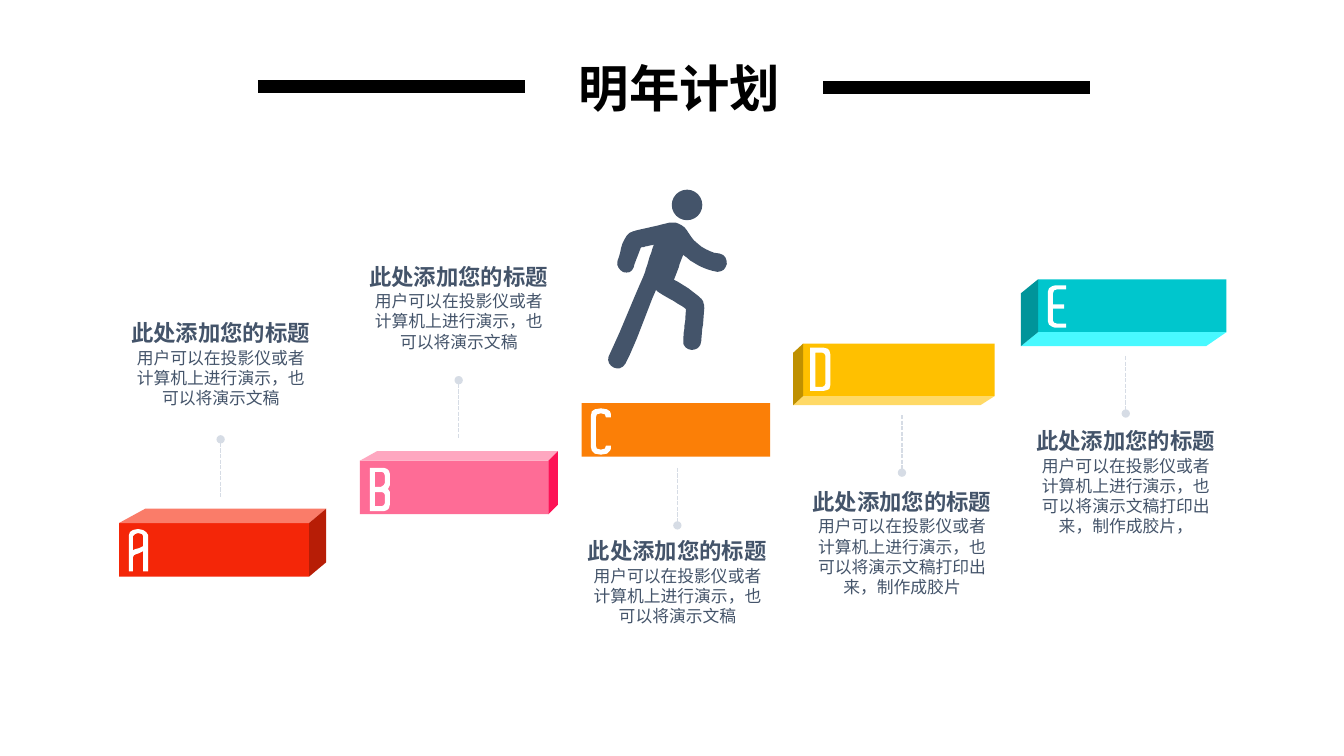
"""Builds the "next year's plan" slide: five rising steps with captions and a walker."""
from math import cos, radians, sin

from lxml import etree
from pptx import Presentation
from pptx.dml.color import RGBColor
from pptx.enum.dml import MSO_LINE
from pptx.enum.shapes import MSO_CONNECTOR, MSO_SHAPE
from pptx.enum.text import MSO_ANCHOR, MSO_AUTO_SIZE, PP_ALIGN
from pptx.oxml.ns import qn
from pptx.util import Cm, Pt

FONT = "Noto Sans CJK SC"
COLORS = {
    "black": "000000", "white": "FFFFFF", "slate": "44546A", "leader": "D6DCE5",
    "A": "F42608", "A_flat": "FA7C69", "A_side": "B71D06",
    "B": "FE6C96", "B_flat": "FEA7C0", "B_side": "FD1256",
    "C": "FB7F07",
    "D": "FFC000", "D_flat": "FFD966", "D_side": "BF9000",
    "E": "00C6CD", "E_flat": "48F9FF", "E_side": "00949A",
}
HEADING = "此处添加您的标题"
SHORT_BODY = "用户可以在投影仪或者计算机上进行演示，也可以将演示文稿"
LONG_BODY = SHORT_BODY + "打印出来，制作成胶片"

STEPS = [
    {"letter": "A", "front": (3, 13.18, 4.79, 1.35), "depth": (0.43, -0.36, 0.66),
     "inset": (0.25, 0.15), "heading": (3.02, 7.92), "leader": 11.07, "body": SHORT_BODY},
    {"letter": "B", "front": (9.07, 11.61, 4.75, 1.35), "depth": (0.24, -0.24, 0.43),
     "inset": (0.25, 0.18), "heading": (9.02, 6.5), "leader": 9.58, "body": SHORT_BODY},
    {"letter": "C", "front": (14.66, 10.16, 4.75, 1.35), "depth": None,
     "inset": (0.23, 0.13), "heading": (14.53, 13.41), "leader": 11.79, "body": SHORT_BODY},
    {"letter": "D", "front": (20.24, 8.66, 4.83, 1.32), "depth": (-0.25, 0.23, 0.36),
     "inset": (0.18, 0.1), "heading": (20.19, 12.17), "leader": 10.46, "body": LONG_BODY},
    {"letter": "E", "front": (26.16, 7.04, 4.75, 1.33), "depth": (-0.43, 0.35, 0.51),
     "inset": (0.25, 0.15), "heading": (25.83, 10.64), "leader": 8.97, "body": LONG_BODY + "，"},
]

LETTERS = {
    "A": [[(19, 42), (14, 42), (14, 22), (10, 24), (7, 25), (5, 26), (4, 28), (4, 42), (0, 42),
           (0, 6), (1, 3), (4, 1), (9, 0), (14, 1), (17, 3), (19, 6)],
          [(6, 20), (10, 19), (14, 17), (14, 7), (13, 5), (9, 4), (6, 5), (4, 7), (4, 21)]],
    "B": [[(0, 0), (14, 0), (17, 1), (19, 3), (20, 6), (20, 17), (18, 21), (20, 24), (20, 36),
           (19, 40), (17, 42), (14, 43), (0, 43)],
          [(5, 4), (12, 4), (14, 5), (15, 8), (15, 15), (14, 17), (11, 19), (5, 19)],
          [(5, 24), (12, 24), (14, 25), (15, 27), (15, 35), (14, 37), (12, 38), (5, 38)]],
    "C": [[(15, 9), (14, 6), (10, 5), (6, 6), (5, 9), (5, 37), (6, 40), (10, 41), (14, 40),
           (15, 37), (20, 37), (20, 40), (19, 42), (16, 45), (10, 46), (4, 45), (1, 42),
           (0, 38), (0, 8), (1, 3), (4, 1), (10, 0), (16, 1), (19, 3), (20, 6), (20, 9)]],
    "D": [[(0, 0), (13, 0), (17, 1), (19, 3), (20, 7), (20, 37), (19, 41), (17, 42), (13, 43),
           (0, 43)],
          [(5, 5), (12, 5), (14, 6), (15, 8), (15, 36), (14, 38), (12, 39), (5, 39)]],
    "E": [[(18, 42), (7, 42), (4, 41), (1, 39), (0, 36), (0, 6), (1, 3), (4, 1), (7, 0), (18, 0),
           (18, 4), (9, 4), (6, 5), (5, 8), (5, 19), (16, 19), (16, 23), (5, 23), (5, 35),
           (6, 37), (9, 38), (18, 38)]],
}

WALKER_START = (621, 361)
WALKER_CURVES = [
    ((630, 344), (642, 308), (651, 288)), ((652, 290), (673, 301), (681, 307)),
    ((680, 318), (679, 328), (678, 338)), ((677, 350), (695, 351), (696, 339)),
    ((697, 328), (698, 317), (699, 306)), ((699, 304), (699, 300), (696, 297)),
    ((688, 289), (679, 283), (669, 278)), ((672, 270), (675, 261), (678, 253)),
    ((687, 261), (698, 268), (712, 270)), ((723, 271), (725, 254), (714, 252)),
    ((700, 250), (690, 242), (683, 231)), ((680, 223), (669, 219), (661, 222)),
    ((650, 225), (639, 227), (628, 230)), ((618, 232), (616, 251), (613, 259)),
    ((610, 270), (626, 276), (629, 265)), ((631, 259), (634, 252), (636, 246)),
    ((640, 245), (645, 244), (649, 243)), ((646, 251), (640, 270), (640, 271)),
    ((637, 277), (618, 325), (604, 354)), ((601, 364), (615, 371), (621, 361)),
]
WALKER_PIVOT = (653, 299)
WALKER_TILT = 21.1


def rgb(name):
    return RGBColor.from_string(COLORS[name])


def paint(shape, color):
    shape.shadow.inherit = False
    shape.fill.solid()
    shape.fill.fore_color.rgb = rgb(color)
    shape.line.fill.background()


def write(shape, text, size, color, bold=False, align=PP_ALIGN.CENTER,
          anchor=MSO_ANCHOR.MIDDLE, wrap=True):
    frame = shape.text_frame
    frame.auto_size = MSO_AUTO_SIZE.NONE
    frame.word_wrap = wrap
    frame.vertical_anchor = anchor
    paragraph = frame.paragraphs[0]
    paragraph.alignment = align
    paragraph.line_spacing = 1.0
    run = paragraph.add_run()
    run.text = text
    run.font.size, run.font.bold, run.font.name = Pt(size), bold, FONT
    run.font.color.rgb = rgb(color)
    etree.SubElement(run.font._element, qn("a:ea")).set("typeface", FONT)


def add_rule(slide, start, end, color, width):
    rule = slide.shapes.add_connector(
        MSO_CONNECTOR.STRAIGHT, *(Cm(length) for length in (*start, *end)))
    rule.line.color.rgb = rgb(color)
    rule.line.width = Pt(width)
    etree.SubElement(rule._element.spPr, qn("a:effectLst"))
    return rule


def add_outline(slide, contours, color, left=0, top=0, unit=0.01):
    first, *others = contours
    builder = slide.shapes.build_freeform(*first[0], scale=Cm(unit))
    builder.add_line_segments(first[1:])
    for contour in others:
        builder.move_to(*contour[0])
        builder.add_line_segments(contour[1:])
    outline = builder.convert_to_shape(Cm(left), Cm(top))
    paint(outline, color)
    return outline


def add_block(slide, letter, front, depth, inset):
    left, top, width, height = front
    face = slide.shapes.add_shape(MSO_SHAPE.RECTANGLE, *(Cm(length) for length in front))
    paint(face, letter)
    if depth:
        dx, dy, skew = depth
        near, far = (left + width, left) if dx > 0 else (left, left + width)
        edge, opposite = (top, top + height) if dy < 0 else (top + height, top)
        back_far = far + skew if dx > 0 else far - skew
        corner = [(near + dx, edge + dy), (near, edge)]
        flat = [(far, edge), (back_far, edge + dy), *corner]
        side = [*corner, (near, opposite), (near + dx, opposite + dy)]
        for part, points in (("flat", flat), ("side", side)):
            contour = [(x * 100, y * 100) for x, y in points]
            add_outline(slide, [contour], f"{letter}_{part}")
    add_outline(slide, LETTERS[letter], "white", left + inset[0], top + inset[1], 0.0254)


def add_caption(slide, heading, body):
    left, top = heading
    body_box = slide.shapes.add_textbox(Cm(left + 0.17), Cm(top + 0.71), Cm(4.75), Cm(2.08))
    body_box.text_frame.margin_left = body_box.text_frame.margin_right = Cm(0.2)
    write(body_box, body, 12, "slate", anchor=MSO_ANCHOR.TOP)
    heading_box = slide.shapes.add_textbox(Cm(left), Cm(top), Cm(5.08), Cm(0.94))
    write(heading_box, HEADING, 16, "slate", bold=True, wrap=False)


def add_leader(slide, x, y, dot_end):
    leader = add_rule(slide, (x, y), (x, y + 1.45), "leader", 1)
    leader.line.dash_style = MSO_LINE.SQUARE_DOT
    etree.SubElement(leader.line._get_or_add_ln(), qn(f"a:{dot_end}")).set("type", "oval")


def curve_points(start, curves, steps=8):
    points = [start]
    for first, second, end in curves:
        origin = points[-1]
        for step in range(1, steps + 1):
            t = step / steps
            weights = ((1 - t) ** 3, 3 * t * (1 - t) ** 2, 3 * t * t * (1 - t), t ** 3)
            knots = (origin, first, second, end)
            points.append(tuple(sum(w * k[axis] for w, k in zip(weights, knots))
                                for axis in (0, 1)))
    return points


def add_walker(slide):
    head = slide.shapes.add_shape(MSO_SHAPE.OVAL, Cm(16.93), Cm(4.78), Cm(0.77), Cm(0.77))
    paint(head, "slate")
    px, py = WALKER_PIVOT
    c, s = cos(radians(WALKER_TILT)), sin(radians(WALKER_TILT))
    upright = [((px + (x - px) * c + (y - py) * s) * 2.54,
                (py - (x - px) * s + (y - py) * c) * 2.54)
               for x, y in curve_points(WALKER_START, WALKER_CURVES)]
    add_outline(slide, [upright], "slate").rotation = WALKER_TILT


def add_title(slide):
    title = slide.shapes.title
    title.left, title.top, title.width, title.height = Cm(14.33), Cm(1.3), Cm(6.15), Cm(1.8)
    write(title, "明年计划", 36, "black", bold=True, align=PP_ALIGN.LEFT)
    add_rule(slide, (6.5, 2.18), (13.23, 2.18), "black", 9.25)
    add_rule(slide, (27.46, 2.21), (20.73, 2.21), "black", 9.25)


def main():
    deck = Presentation()
    deck.slide_width, deck.slide_height = Cm(33.87), Cm(19.05)
    slide = deck.slides.add_slide(deck.slide_layouts[5])
    add_title(slide)
    for step in STEPS:
        left, top = step["heading"]
        dot_end = "headEnd" if top < step["front"][1] else "tailEnd"
        add_block(slide, step["letter"], step["front"], step["depth"], step["inset"])
        add_caption(slide, step["heading"], step["body"])
        add_leader(slide, left + 2.54, step["leader"], dot_end)
    add_walker(slide)
    deck.save("out.pptx")


if __name__ == "__main__":
    main()
